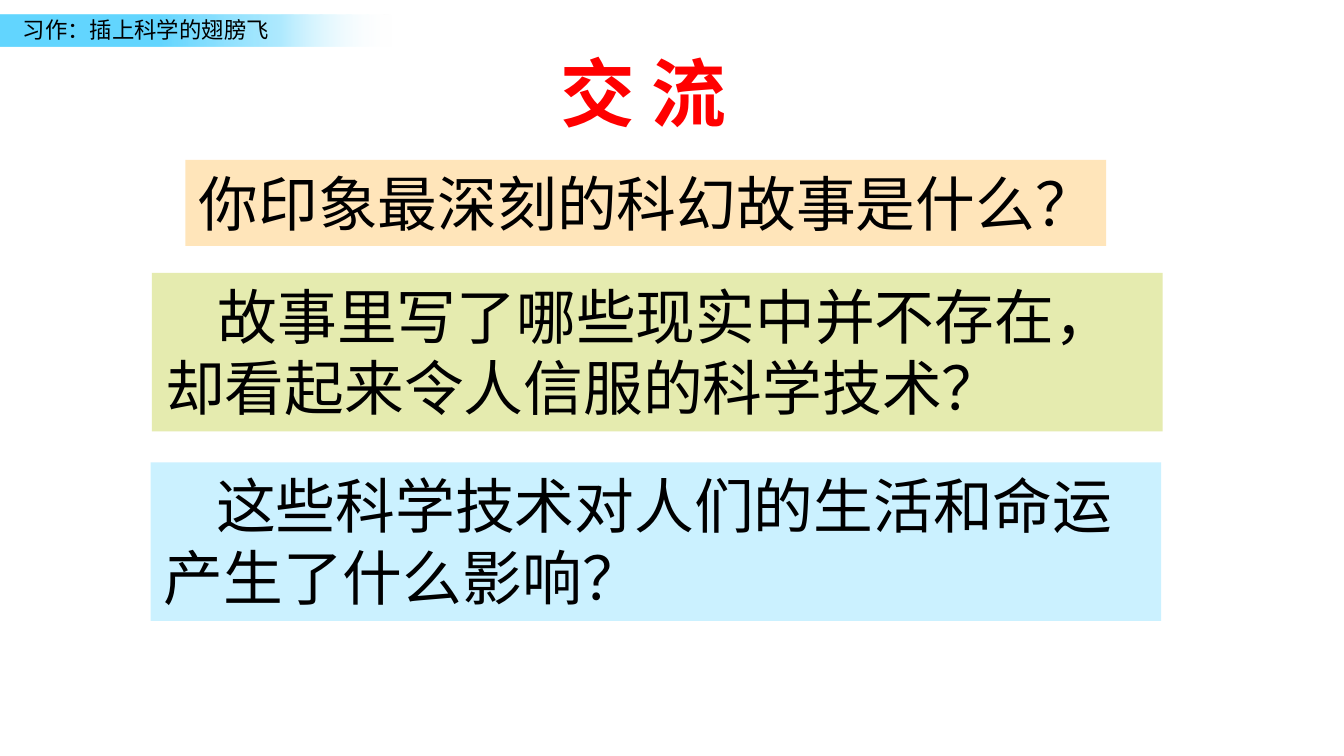
"""Build the discussion slide with its header band, title and three questions."""
import pptx
import pptx.dml.color
import pptx.enum.shapes
import pptx.enum.text
import pptx.util
from lxml import etree

Inches = pptx.util.Inches
FONT = "Noto Sans CJK SC"
NS = "http://schemas.openxmlformats.org/drawingml/2006/main"
RECT = pptx.enum.shapes.MSO_SHAPE.RECTANGLE


def color(code):
    return pptx.dml.color.RGBColor.from_string(code)


def write(shape, text, size=32, ink="000000", bold=False, wrap=True, indent=0):
    frame = shape.text_frame
    frame.word_wrap = wrap
    frame.vertical_anchor = pptx.enum.text.MSO_ANCHOR.TOP
    para = frame.paragraphs[0]
    para.alignment = pptx.enum.text.PP_ALIGN.LEFT
    if indent:
        para._p.get_or_add_pPr().set("indent", str(Inches(indent)))
    run = para.add_run()
    run.text = text
    run.font.size = pptx.util.Pt(size)
    run.font.bold = bold
    run.font.color.rgb = color(ink)
    run.font.name = FONT
    etree.SubElement(run.font._element, f"{{{NS}}}ea", typeface=FONT)


deck = pptx.Presentation()
deck.slide_width = Inches(10)
deck.slide_height = Inches(10 * 9 / 16)
slide = deck.slides.add_slide(deck.slide_layouts[6])
shapes = slide.shapes

band = shapes.add_shape(RECT, Inches(-0.03), Inches(0.11), Inches(3.03), Inches(0.24))
band.shadow.inherit = False
band.line.fill.background()
band.fill.gradient()
band.fill.gradient_angle = 0
stops = band.fill._fill._gradFill.find(f"{{{NS}}}gsLst")
for stop in list(stops):
    stops.remove(stop)
for place, code, alpha in [(40, "63D6FF", 100), (70, "97E4FF", 76), (97, "FFFFFF", 0)]:
    stop = etree.SubElement(stops, f"{{{NS}}}gs", pos=str(place * 1000))
    tint = etree.SubElement(stop, f"{{{NS}}}srgbClr", val=code)
    etree.SubElement(tint, f"{{{NS}}}alpha", val=str(alpha * 1000))

head = shapes.add_textbox(Inches(0.07), Inches(0.07), Inches(2.05), Inches(0.3))
write(head, "习作：插上科学的翅膀飞", size=12, wrap=False)

title = shapes.add_textbox(Inches(4.07), Inches(0.3), Inches(1.61), Inches(0.77))
write(title, "交 流", size=40, ink="FF0000", bold=True, wrap=False)

cards = [
    (1.38, 1.19, 6.85, 0.64, "FFE5BA", 0, "你印象最深刻的科幻故事是什么？"),
    (1.13, 2.03, 7.52, 1.18, "E5EBAF", 0.39,
     "故事里写了哪些现实中并不存在，却看起来令人信服的科学技术？"),
    (1.12, 3.44, 7.52, 1.18, "CBF1FF", 0.39,
     "这些科学技术对人们的生活和命运产生了什么影响？"),
]
for left, top, width, height, fill, indent, text in cards:
    card = shapes.add_shape(RECT, Inches(left), Inches(top), Inches(width), Inches(height))
    card.shadow.inherit = False
    card.fill.solid()
    card.fill.fore_color.rgb = color(fill)
    card.line.fill.background()
    write(card, text, indent=indent)

deck.save("out.pptx")
